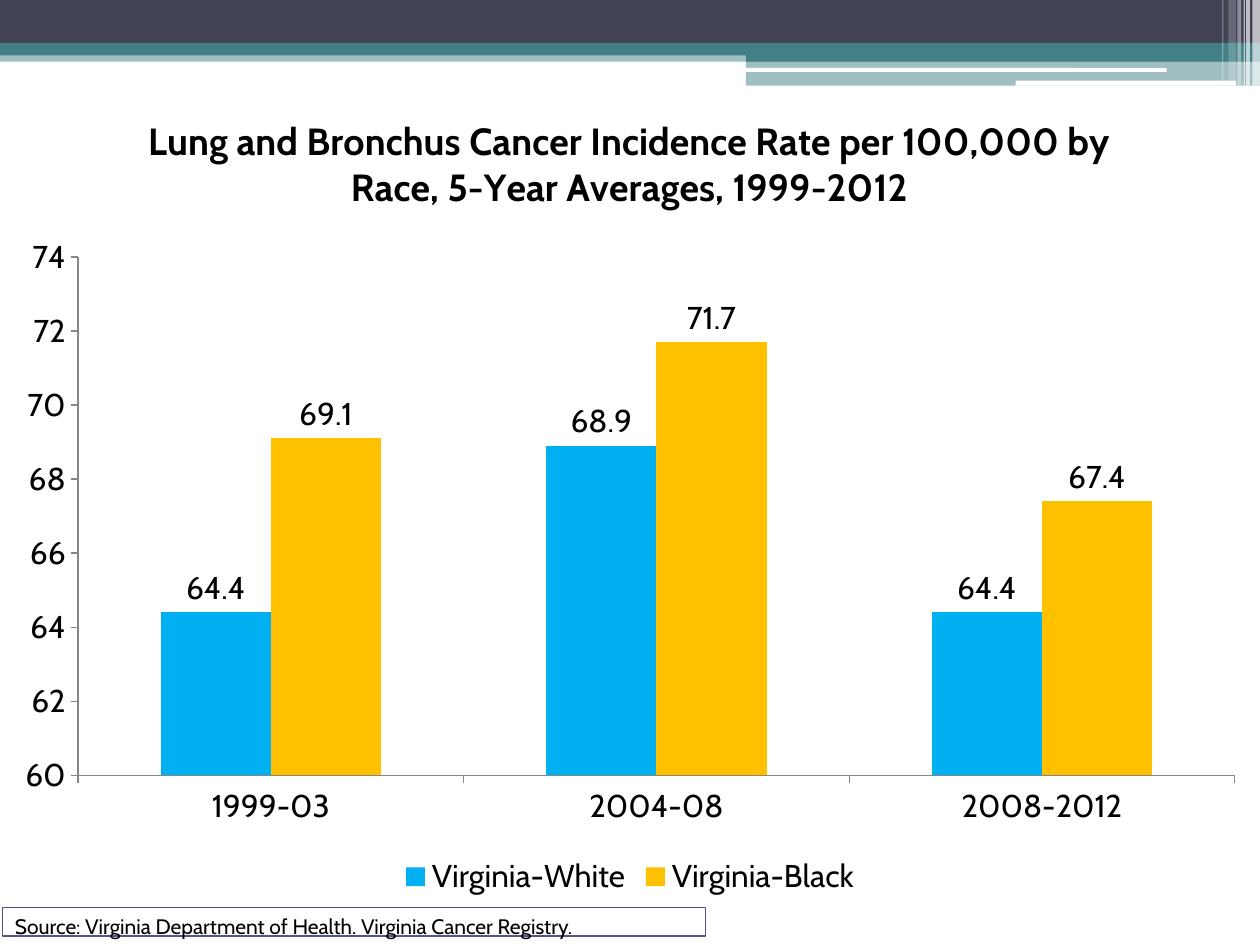
from dataclasses import dataclass

from lxml.etree import SubElement
from pptx import Presentation
from pptx.chart.data import CategoryChartData
from pptx.dml.color import RGBColor
from pptx.enum.chart import XL_CHART_TYPE as ChartType
from pptx.enum.chart import XL_LABEL_POSITION as LabelPosition
from pptx.enum.chart import XL_LEGEND_POSITION as LegendPosition
from pptx.enum.chart import XL_TICK_MARK as TickMark
from pptx.enum.shapes import MSO_SHAPE as Shape
from pptx.enum.text import MSO_ANCHOR as Anchor
from pptx.enum.text import PP_ALIGN as Align
from pptx.oxml import parse_xml
from pptx.oxml.ns import nsdecls, qn
from pptx.util import Inches, Pt


@dataclass(frozen=True)
class Theme:
    font: str = "Cabin"
    navy: str = "424456"
    teal: str = "438086"
    white: str = "FFFFFF"
    black: str = "000000"
    outline: str = "53548A"
    axis: str = "868686"
    title_size: float = 21.6
    chart_size: float = 18
    source_size: float = 12


THEME = Theme()
WIDTH, HEIGHT = 10, 7.5

# Content
TITLE = ("Lung and Bronchus Cancer Incidence Rate per 100,000 by Race, "
         "5-Year Averages, 1999-2012")
SOURCE = "Source: Virginia Department of Health. Virginia Cancer Registry."
PERIODS = ["1999-03", "2004-08", "2008-2012"]
SERIES = [
    ("Virginia-White", [64.4, 68.9, 64.4], "00B0F0"),
    ("Virginia-Black", [69.1, 71.7, 67.4], "FFC000"),
]

# Header bands: left, top, width, height, colour, opacity in percent
BANDS = [
    (0, 0.4, WIDTH, 0.09, THEME.teal, 50),
    (0, 0, WIDTH, 0.34, THEME.navy, 100),
    (0, 0.34, WIDTH, 0.1, THEME.teal, 100),
    (5.92, 0.39, 4.08, 0.1, THEME.teal, 100),
    (5.92, 0.48, 4.08, 0.2, THEME.teal, 50),
]
# Rounded white bars: left, top, width, height
BARS = [(5.91, 0.54, 3.35, 0.03), (8.06, 0.64, 1.75, 0.04)]
# White stripes from the top edge: left, width, height, opacity in percent
STRIPES = [
    (9.94, 0.06, 0.68, 65),
    (9.89, 0.03, 0.68, 65),
    (9.87, 0.01, 0.68, 60),
    (9.82, 0.03, 0.68, 40),
    (9.75, 0.06, 0.64, 20),
    (9.7, 0.01, 0.64, 30),
]

# Shares of the chart frame: x, y, and for the plot also width, height
PLOT_LAYOUT = {"x": 0.062, "y": 0.211, "w": 0.918, "h": 0.634}


def rgb(colour):
    return RGBColor.from_string(colour)


def set_font(font, size, bold=False):
    font.name, font.size, font.bold = THEME.font, Pt(size), bold
    font.color.rgb = rgb(THEME.black)


def add_block(slide, left, top, width, height, colour, opacity=100, kind=Shape.RECTANGLE):
    shape = slide.shapes.add_shape(
        kind, Inches(left), Inches(top), Inches(width), Inches(height))
    shape.shadow.inherit = False
    shape.fill.solid()
    shape.fill.fore_color.rgb = rgb(colour)
    shape.line.fill.background()
    if opacity < 100:
        colour_element = shape.fill._xPr.find(".//" + qn("a:srgbClr"))
        SubElement(colour_element, qn("a:alpha"), val=str(opacity * 1000))
    return shape


def add_header(slide):
    for band in BANDS:
        add_block(slide, *band)
    for bar in BARS:
        add_block(slide, *bar, THEME.white, kind=Shape.ROUNDED_RECTANGLE)
    for left, width, height, opacity in STRIPES:
        add_block(slide, left, 0, width, height, THEME.white, opacity)


def add_source(slide):
    box = add_block(slide, 0.02, 7.2, 5.58, 0.23, THEME.white)
    box.line.color.rgb = rgb(THEME.outline)
    box.line.width = Pt(0.75)
    frame = box.text_frame
    frame.word_wrap = True
    frame.vertical_anchor = Anchor.TOP
    paragraph = frame.paragraphs[0]
    paragraph.alignment = Align.LEFT
    run = paragraph.add_run()
    run.text = SOURCE
    set_font(run.font, THEME.source_size)


def fix_plot_area(chart):
    plot_area = chart._chartSpace.chart.plotArea
    for old in plot_area.findall(qn("c:layout")):
        plot_area.remove(old)
    modes = "".join(f'<c:{axis}Mode val="edge"/>' for axis in "xy")
    sizes = "".join(f'<c:{key} val="{share}"/>' for key, share in PLOT_LAYOUT.items())
    plot_area.insert(0, parse_xml(
        f'<c:layout {nsdecls("c")}><c:manualLayout><c:layoutTarget val="inner"/>'
        f'{modes}{sizes}</c:manualLayout></c:layout>'))


def add_rate_chart(slide):
    data = CategoryChartData(number_format="0.0")
    data.categories = PERIODS
    for name, values, _ in SERIES:
        data.add_series(name, values)
    chart = slide.shapes.add_chart(
        ChartType.COLUMN_CLUSTERED, Inches(0), Inches(0.67),
        Inches(WIDTH), Inches(6.49), data).chart
    set_font(chart.font, THEME.chart_size)

    # Title and legend
    chart.has_title = True
    run = chart.chart_title.text_frame.paragraphs[0].add_run()
    run.text = TITLE
    set_font(run.font, THEME.title_size, bold=True)
    chart.chart_title.include_in_layout = False
    chart.has_legend = True
    chart.legend.position = LegendPosition.BOTTOM
    chart.legend.include_in_layout = False

    # Columns and their labels
    plot = chart.plots[0]
    plot.gap_width, plot.overlap = 150, 0
    plot.vary_by_categories = False
    for series, (_, _, colour) in zip(plot.series, SERIES):
        series.format.fill.solid()
        series.format.fill.fore_color.rgb = rgb(colour)
        labels = series.data_labels
        labels.show_value = True
        labels.position = LabelPosition.OUTSIDE_END
        labels.number_format, labels.number_format_is_linked = "0.0", False

    # Axes
    for axis in (chart.category_axis, chart.value_axis):
        axis.has_major_gridlines = False
        axis.major_tick_mark, axis.minor_tick_mark = TickMark.OUTSIDE, TickMark.NONE
        axis.format.line.color.rgb = rgb(THEME.axis)
        axis.format.line.width = Pt(0.75)
    scale = chart.value_axis
    scale.minimum_scale, scale.maximum_scale, scale.major_unit = 60, 74, 2
    scale.tick_labels.number_format = "0"
    scale.tick_labels.number_format_is_linked = False
    fix_plot_area(chart)


def main():
    presentation = Presentation()
    presentation.slide_width, presentation.slide_height = Inches(WIDTH), Inches(HEIGHT)
    slide = presentation.slides.add_slide(presentation.slide_layouts[6])
    add_header(slide)
    add_source(slide)
    add_rate_chart(slide)
    presentation.save("out.pptx")


if __name__ == "__main__":
    main()
